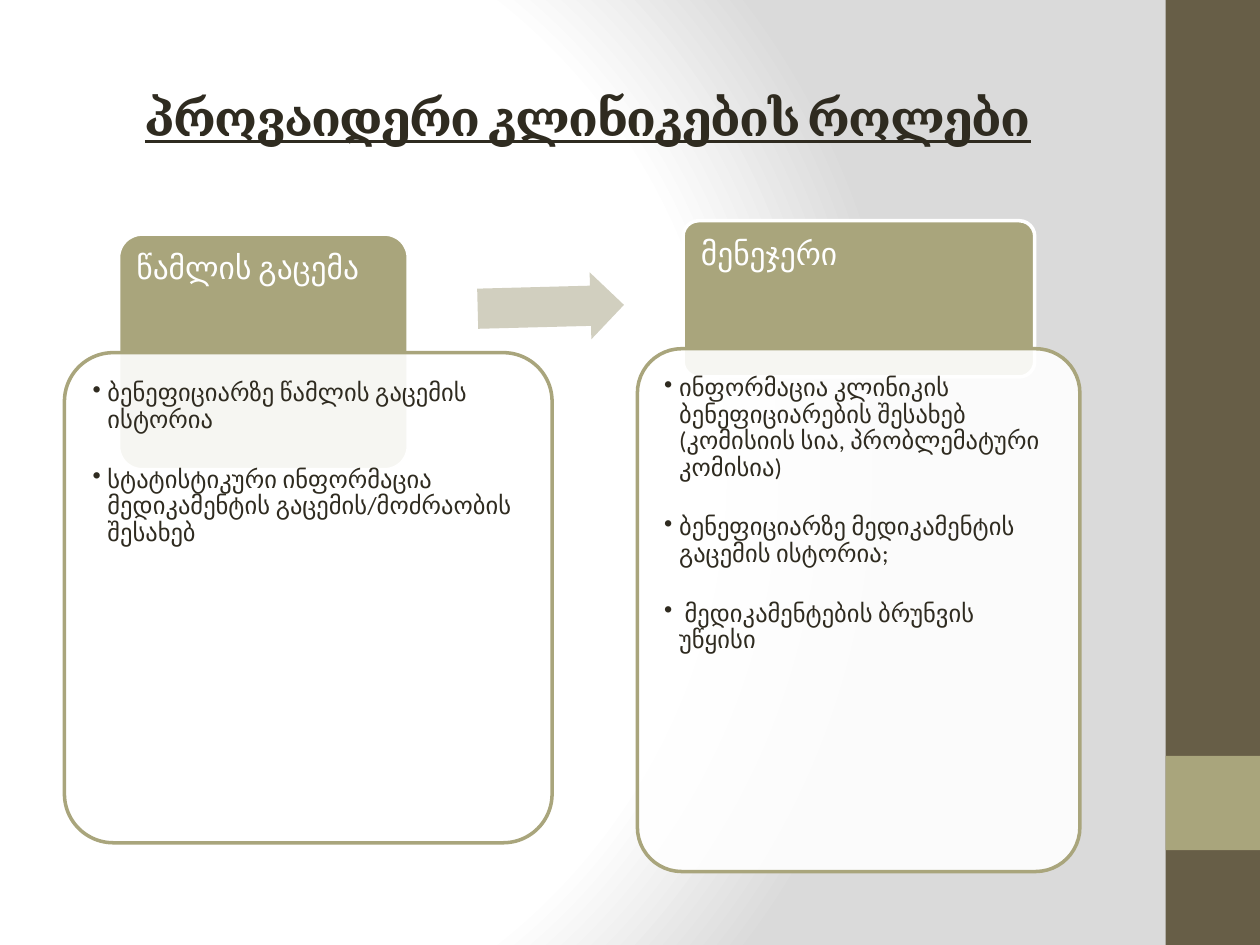
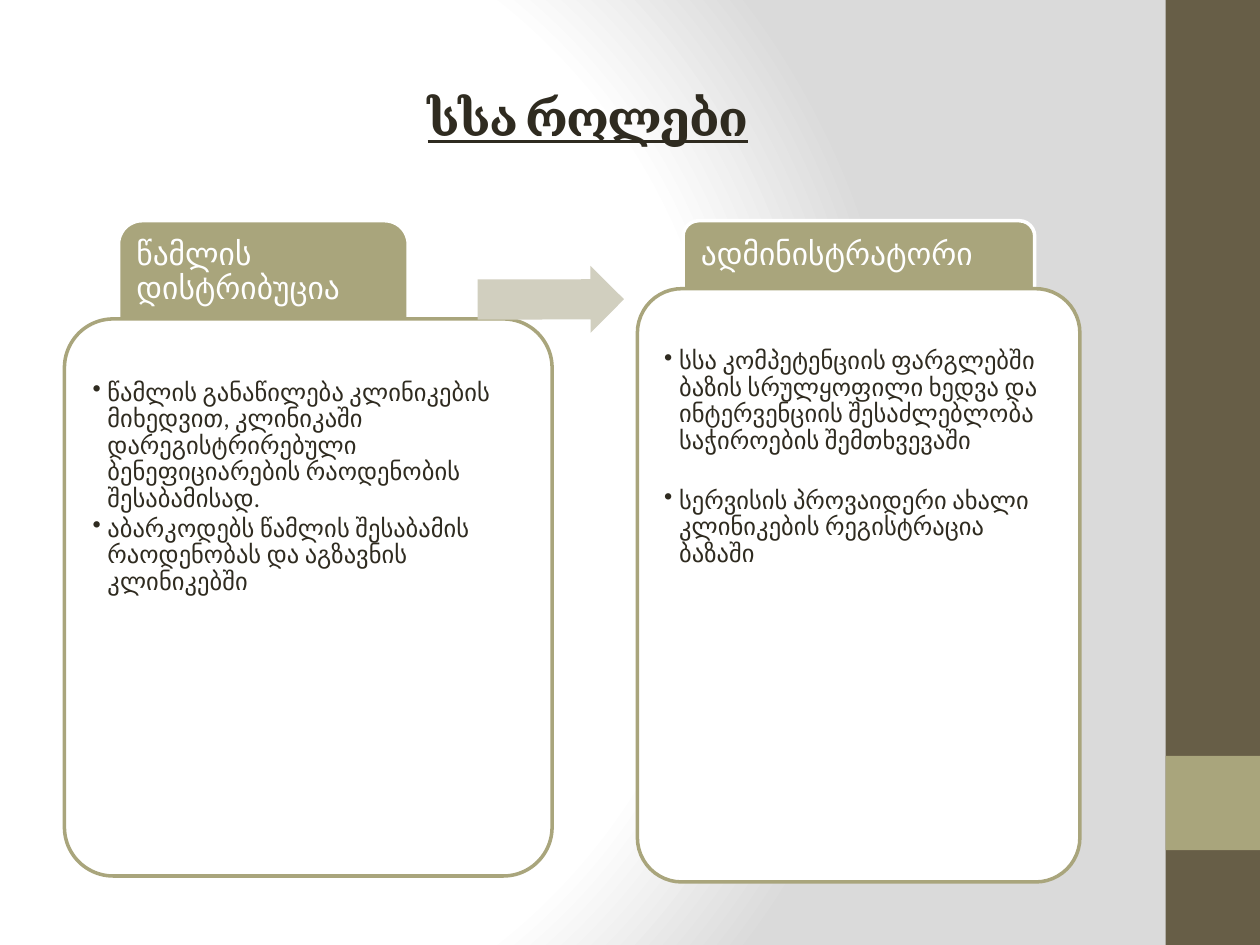
from lxml.etree import SubElement
from pptx import Presentation
from pptx.dml.color import RGBColor
from pptx.enum.shapes import MSO_SHAPE
from pptx.enum.text import MSO_ANCHOR, PP_ALIGN
from pptx.oxml.ns import qn
from pptx.util import Cm, Pt

DARK, OLIVE, SAND = "675E47", "A9A57C", "D1CFBF"
WHITE, GREY, INK = "FFFFFF", "DADADA", "2F2B20"
HEADING_FONT, BODY_FONT = "Cambria", "Calibri"
CORNER = 0.1
CORNER_INSET = 0.29 * CORNER  # text inset of a rounded corner, per unit of the short side
TAB_INSET, CARD_INSET = 0.36, 0.28
CLOSE_GAP, WIDE_GAP = 2, 19  # points between bullets
LOW_START = 0.67  # extra room above the first bullet


def color(hex_string):
    return RGBColor.from_string(hex_string)


def write(paragraph, text, font=BODY_FONT, size=14, ink=INK, bold=False,
          underline=False, align=PP_ALIGN.LEFT, spacing=0.9, tracking=None,
          bullet=False, gap=0):
    paragraph.alignment = align
    paragraph.line_spacing = spacing
    paragraph.space_before = Pt(0)
    paragraph.space_after = Pt(gap)
    run = paragraph.add_run()
    run.text = text
    run.font.name, run.font.size = font, Pt(size)
    run.font.bold, run.font.underline = bold, underline
    run.font.color.rgb = color(ink)
    if tracking is not None:
        run.font._element.set("spc", str(tracking * 100))
    if bullet:
        properties = paragraph._p.get_or_add_pPr()
        properties.set("marL", str(Cm(0.3)))
        properties.set("indent", str(-Cm(0.3)))
        SubElement(properties, qn("a:buChar"), char="•")


class RoleDeck:
    """Holds the shared style and the slide being built."""

    def __init__(self):
        self.presentation = Presentation()
        self.presentation.slide_width = Cm(25.4)
        self.presentation.slide_height = Cm(19.05)
        self.slide = None
        self.set_background()

    def set_background(self):
        """Give the master a circular gradient that is white on the left."""
        master = self.presentation.slide_master
        master.background.fill.gradient()
        gradient = master.element.find(".//" + qn("a:gradFill"))
        for child in list(gradient):
            gradient.remove(child)
        stops = SubElement(gradient, qn("a:gsLst"))
        for position, shade in ((0, WHITE), (75, WHITE), (100, GREY)):
            stop = SubElement(stops, qn("a:gs"), pos=str(position * 1000))
            SubElement(stop, qn("a:srgbClr"), val=shade)
        path = SubElement(gradient, qn("a:path"), path="circle")
        SubElement(path, qn("a:fillToRect"), l="20000", t="50000", r="100000", b="50000")

    def add_slide(self, title):
        layout = self.presentation.slide_layouts.get_by_name("Title Only")
        self.slide = self.presentation.slides.add_slide(layout)
        self.shape(MSO_SHAPE.RECTANGLE, (23.5, 0, 1.9, 19.05), DARK)
        self.shape(MSO_SHAPE.RECTANGLE, (23.5, 15.24, 1.9, 1.9), OLIVE)
        placeholder = self.slide.shapes.title
        placeholder.left, placeholder.top = Cm(1.27), Cm(0.76)
        placeholder.width, placeholder.height = Cm(21.16), Cm(3.18)
        placeholder.text_frame.vertical_anchor = MSO_ANCHOR.MIDDLE
        write(placeholder.text_frame.paragraphs[0], title, font=HEADING_FONT, size=28,
              bold=True, underline=True, align=PP_ALIGN.CENTER, spacing=1.0, tracking=-1)

    def shape(self, kind, box, fill, line=None, opacity=100):
        shape = self.slide.shapes.add_shape(kind, *map(Cm, box))
        shape.shadow.inherit = False
        shape.fill.solid()
        shape.fill.fore_color.rgb = color(fill)
        if opacity < 100:
            shade = shape._element.spPr.find(".//" + qn("a:srgbClr"))
            SubElement(shade, qn("a:alpha"), val=str(opacity * 1000))
        if line:
            shape.line.color.rgb = color(line)
            shape.line.width = Pt(2)
        else:
            shape.line.fill.background()
        return shape

    def rounded_box(self, box, fill, line, inset, extra_top=0, opacity=100):
        """Add a rounded rectangle and return its text frame."""
        shape = self.shape(MSO_SHAPE.ROUNDED_RECTANGLE, box, fill, line, opacity)
        shape.adjustments[0] = CORNER
        frame = shape.text_frame
        frame.word_wrap = True
        frame.vertical_anchor = MSO_ANCHOR.TOP
        frame.margin_left = frame.margin_right = frame.margin_bottom = Cm(inset)
        frame.margin_top = Cm(inset + extra_top)
        return frame

    def tab(self, box, heading):
        inset = TAB_INSET - CORNER_INSET * min(box[2:])
        frame = self.rounded_box(box, OLIVE, WHITE, inset)
        write(frame.paragraphs[0], heading, size=18, ink=WHITE)

    def card(self, box, bullets, gap, extra_top, opacity):
        frame = self.rounded_box(box, WHITE, OLIVE, CARD_INSET, extra_top, opacity)
        for index, text in enumerate(bullets):
            paragraph = frame.add_paragraph() if index else frame.paragraphs[0]
            write(paragraph, text, bullet=True, gap=gap)

    def left_role(self, heading, bullets, tab_top, top, height,
                  gap=WIDE_GAP, extra_top=0, opacity=100):
        self.tab((2.39, tab_top, 5.84, 4.75), heading)
        self.card((1.3, top, 9.83, height), bullets, gap, extra_top, opacity)

    def right_role(self, heading, bullets, top, height, extra_top=0, opacity=100):
        self.tab((13.77, 4.45, 7.09, 3.15), heading)
        self.card((12.85, top, 8.92, height), bullets, WIDE_GAP, extra_top, opacity)

    def arrow(self, top, rotation):
        arrow = self.shape(MSO_SHAPE.RIGHT_ARROW, (9.63, top, 2.95, 1.35), SAND)
        arrow.adjustments[0], arrow.adjustments[1] = 0.6, 0.5
        arrow.rotation = rotation


def main():
    deck = RoleDeck()

    deck.add_slide("პროვაიდერი კლინიკების როლები")
    deck.left_role("წამლის გაცემა", [
        "ბენეფიციარზე წამლის გაცემის ისტორია",
        "სტატისტიკური ინფორმაცია მედიკამენტის გაცემის/მოძრაობის შესახებ",
    ], tab_top=4.72, top=7.11, height=9.88, opacity=90)
    deck.arrow(5.51, 358.5)
    deck.right_role("მენეჯერი", [
        "ინფორმაცია კლინიკის ბენეფიციარების შესახებ (კომისიის სია, პრობლემატური კომისია)",
        "ბენეფიციარზე მედიკამენტის გაცემის ისტორია;",
        " მედიკამენტების ბრუნვის უწყისი",
    ], top=7.03, height=10.54, opacity=90)

    deck.add_slide("სსა როლები")
    deck.left_role("წამლის დისტრიბუცია", [
        "წამლის განაწილება კლინიკების მიხედვით, კლინიკაში დარეგისტრირებული "
        "ბენეფიციარების რაოდენობის შესაბამისად.",
        "აბარკოდებს წამლის შესაბამის რაოდენობას და აგზავნის კლინიკებში",
    ], tab_top=4.45, top=6.43, height=11.23, gap=CLOSE_GAP, extra_top=LOW_START)
    deck.arrow(5.36, 359.9)
    deck.right_role("ადმინისტრატორი", [
        "სსა კომპეტენციის ფარგლებში ბაზის სრულყოფილი ხედვა და ინტერვენციის "
        "შესაძლებლობა საჭიროების შემთხვევაში",
        "სერვისის პროვაიდერი ახალი კლინიკების რეგისტრაცია ბაზაში",
    ], top=5.82, height=11.96, extra_top=LOW_START)

    deck.presentation.save("out.pptx")


if __name__ == "__main__":
    main()
